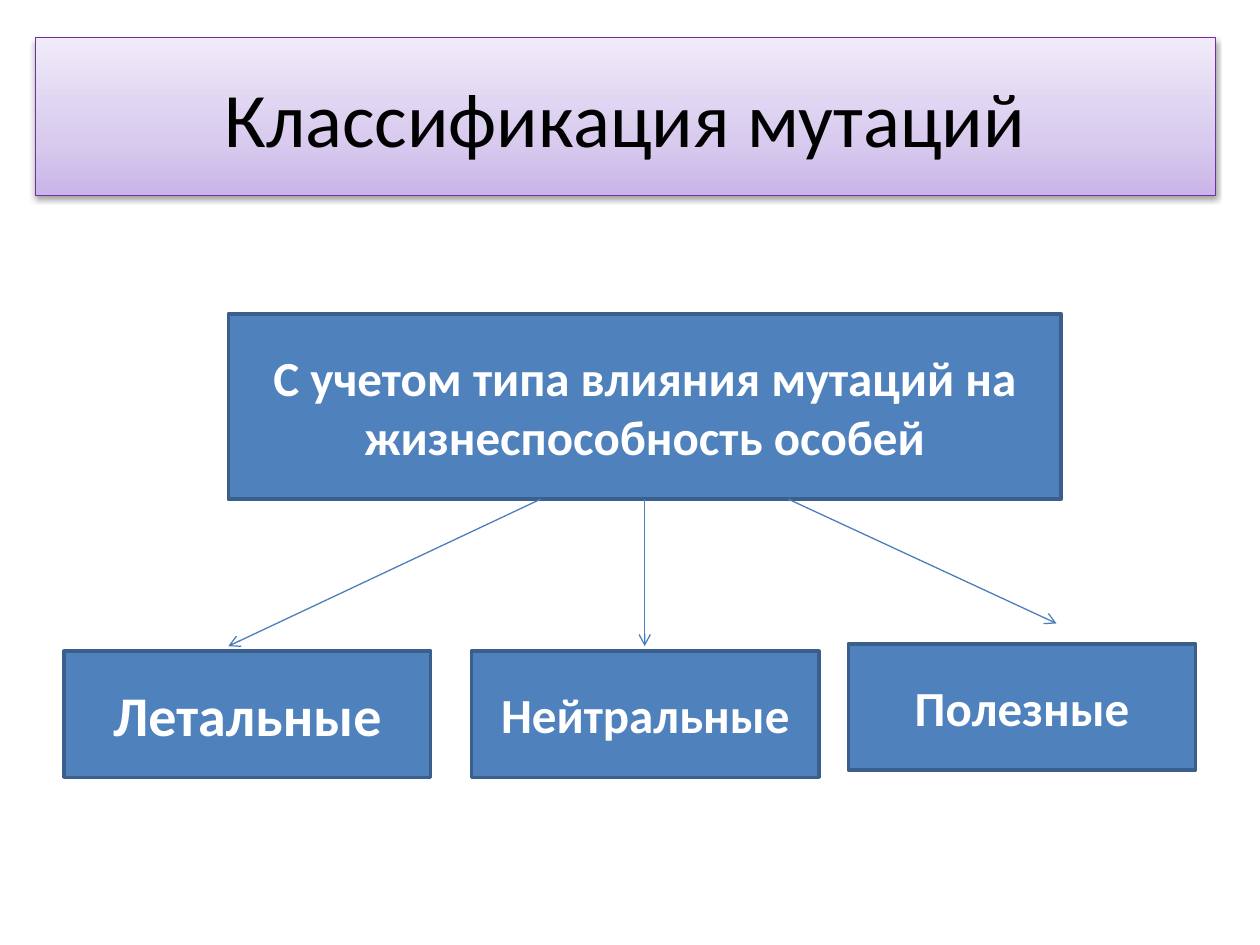
from lxml.etree import SubElement as Sub
from pptx import Presentation as Deck
from pptx.dml.color import RGBColor as Rgb
from pptx.enum.shapes import MSO_CONNECTOR as Link, MSO_SHAPE as Form
from pptx.enum.text import MSO_ANCHOR as Anchor, PP_ALIGN as Align
from pptx.oxml.ns import qn
from pptx.util import Inches, Pt

CELL = Inches(0.1)
COLS, ROWS = 100, 75
HUE = {
    "ink": "000000", "white": "FFFFFF", "blue": "4F81BD", "edge": "3A5F8C",
    "arrow": "4B7EBC", "plum": "7030A0",
    "low": "C9B5E8", "mid": "D8CBEE", "high": "F0EAF9",
}


def rgb(name):
    """Return the named colour."""
    return Rgb.from_string(HUE[name])


def grid(*vals):
    """Turn grid cells into slide lengths."""
    return [round(val * CELL) for val in vals]


def write(shape, text, size=28, bold=True, hue="white"):
    """Put centred text in a shape."""
    frame = shape.text_frame
    frame.word_wrap = True
    frame.vertical_anchor = Anchor.MIDDLE
    para = frame.paragraphs[0]
    para.alignment = Align.CENTER
    run = para.add_run()
    run.text = text
    font = run.font
    font.name, font.size, font.bold = "Calibri", Pt(size), bold
    font.color.rgb = rgb(hue)


def block(slide, box, text, edge="edge", width=2, **style):
    """Draw a blue box with text."""
    shape = slide.shapes.add_shape(Form.RECTANGLE, *grid(*box))
    shape.shadow.inherit = False
    shape.fill.solid()
    shape.fill.fore_color.rgb = rgb("blue")
    shape.line.color.rgb = rgb(edge)
    shape.line.width = Pt(width)
    write(shape, text, **style)
    return shape


def shade(shape, stops):
    """Fill a shape with a gradient rising from its foot."""
    shape.fill.gradient()
    shape.fill.gradient_angle = 90
    bank = shape._element.spPr.find(f".//{qn('a:gsLst')}")
    for old in list(bank):
        bank.remove(old)
    for pos, name in stops:
        stop = Sub(bank, qn("a:gs"), pos=str(pos * 1000))
        Sub(stop, qn("a:srgbClr"), val=HUE[name])


def drop(shape, blur, dist, alpha):
    """Cast a soft shadow below a shape."""
    bank = shape._element.spPr.find(qn("a:effectLst"))
    cast = Sub(bank, qn("a:outerShdw"), blurRad=str(Pt(blur)),
               dist=str(Pt(dist)), dir="5400000", rotWithShape="0")
    tint = Sub(cast, qn("a:srgbClr"), val=HUE["ink"])
    Sub(tint, qn("a:alpha"), val=str(alpha * 1000))


def arrow(slide, start, end):
    """Draw a thin line with an open head at its end."""
    line = slide.shapes.add_connector(Link.STRAIGHT, *grid(*start, *end))
    line.line.color.rgb = rgb("arrow")
    line.line.width = Pt(0.75)
    Sub(line.line._get_or_add_ln(), qn("a:tailEnd"), type="arrow")
    Sub(line._element.spPr, qn("a:effectLst"))


def banner(slide, box):
    """Draw the title band."""
    shape = block(slide, box, "Классификация мутаций", edge="plum",
                  width=0.75, size=44, bold=False, hue="ink")
    shade(shape, [(0, "low"), (35, "mid"), (100, "high")])
    drop(shape, blur=3.1, dist=1.6, alpha=38)


def tree(slide, box):
    """Draw the root box, its three kinds and the arrows to them."""
    left, top, wide, high = box
    foot = top + 0.4 * high
    block(slide, (left + 0.145 * wide, top, 0.736 * wide, 0.4 * high),
          "С учетом типа влияния мутаций на жизнеспособность особей")
    kinds = [
        ("Летальные", 32, 0, 0.324, 0.728, 0.421, 0.145, 0.717),
        ("Нейтральные", 28, 0.36, 0.307, 0.728, 0.513, 0.513, 0.717),
        ("Полезные", 28, 0.693, 0.307, 0.712, 0.64, 0.877, 0.668),
    ]
    for text, size, col, span, row, start, end, tip in kinds:
        block(slide, (left + col * wide, top + row * high,
                      span * wide, 0.272 * high), text, size=size)
        arrow(slide, (left + start * wide, foot),
              (left + end * wide, top + tip * high))


def main():
    """Build and save the slide."""
    deck = Deck()
    deck.slide_width, deck.slide_height = grid(COLS, ROWS)
    slide = deck.slides.add_slide(deck.slide_layouts[6])
    banner(slide, (2.8, 3, 93.7, 12.5))
    tree(slide, (5.1, 24.9, 89.8, 36.8))
    deck.save("out.pptx")


if __name__ == "__main__":
    main()
